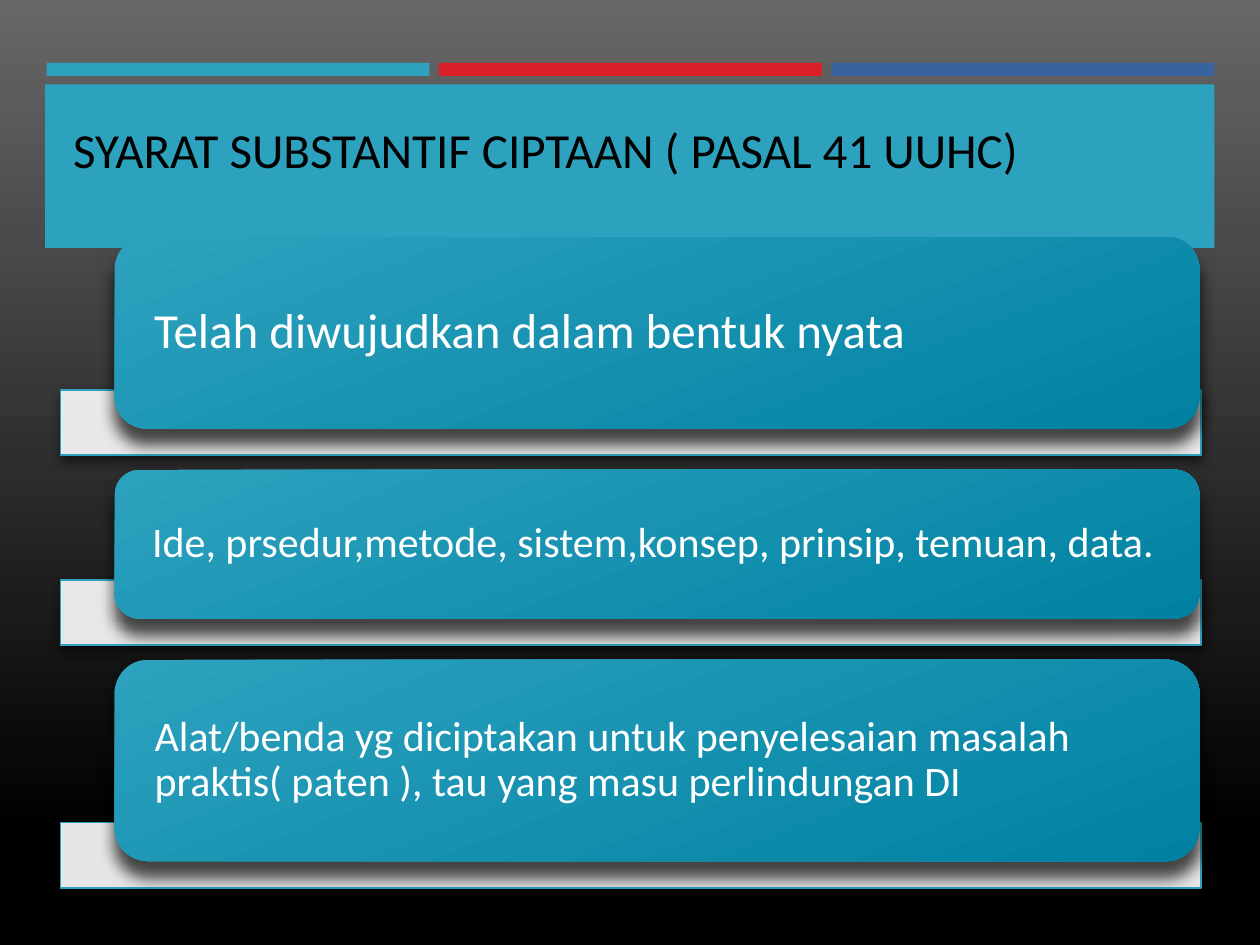
from dataclasses import dataclass

from lxml import etree
from pptx import Presentation
from pptx.dml.color import RGBColor
from pptx.enum import shapes, text
from pptx.oxml import ns
from pptx.util import Cm, Pt

TEAL, DEEP_TEAL, RED, BLUE = "2DA2BF", "0081A1", "DA1F28", "39639D"
BLACK, WHITE, GREY = "000000", "FFFFFF", "676767"
FONT = "Calibri"
CARD_TOP, CARD_STEP = 4.78, 0.83
TRACK_OVERLAP = 0.78


@dataclass
class Card:
    words: str
    height: float
    size: int


@dataclass
class Shadow:
    alpha: int
    blur: float
    dist: float


CARDS = [
    Card("Telah diwujudkan dalam bentuk nyata", 3.86, 28),
    Card("Ide, prsedur,metode, sistem,konsep, prinsip, temuan, data.", 3.0, 24),
    Card("Alat/benda yg diciptakan untuk penyelesaian masalah praktis( paten ), "
         "tau yang masu perlindungan DI", 4.06, 24),
]
TRACK_SHADOW = Shadow(60, 6, 3)
CARD_SHADOW = Shadow(70, 9, 9)


def rgb(value: str) -> RGBColor:
    return RGBColor.from_string(value)


def add_sub(parent, tag: str, **attrs):
    return etree.SubElement(parent, ns.qn(tag), attrs)


def fill_gradient(fill, start: str, end: str, end_pos: float, angle: float) -> None:
    """Fill from start to end; the angle runs clockwise."""
    fill.gradient()
    fill.gradient_angle = 360 - angle
    for stop, color, pos in zip(fill.gradient_stops, (start, end), (0, end_pos)):
        stop.color.rgb = rgb(color)
        stop.position = pos


def add_box(s, kind, left: float, top: float, width: float, height: float, color: str):
    sp = s.shapes.add_shape(kind, Cm(left), Cm(top), Cm(width), Cm(height))
    sp.shadow.inherit = False
    sp.fill.solid()
    sp.fill.fore_color.rgb = rgb(color)
    sp.line.fill.background()
    return sp


def add_shadow(sp, shadow: Shadow) -> None:
    effects = sp._element.spPr.find(ns.qn("a:effectLst"))
    outer = add_sub(effects, "a:outerShdw", blurRad=str(Pt(shadow.blur)),
                    dist=str(Pt(shadow.dist)), dir="5400000", rotWithShape="0")
    color = add_sub(outer, "a:srgbClr", val=BLACK)
    add_sub(color, "a:alpha", val=str(shadow.alpha * 1000))


def write(tf, words: str, size: int, color: str, frame: dict) -> None:
    for name, value in frame.items():
        setattr(tf, name, value)
    p = tf.paragraphs[0]
    p.alignment = text.PP_ALIGN.LEFT
    p.line_spacing = 0.9
    r = p.add_run()
    r.text = words
    for name, value in {"size": Pt(size), "name": FONT}.items():
        setattr(r.font, name, value)
    r.font.color.rgb = rgb(color)


def add_track(s, top: float) -> None:
    sp = add_box(s, shapes.MSO_SHAPE.RECTANGLE, 1.22, top, 22.99, 1.32, WHITE)
    color = sp._element.spPr.find(ns.qn("a:solidFill"))[0]
    add_sub(color, "a:alpha", val="90000")
    sp.line.color.rgb = rgb(TEAL)
    sp.line.width = Pt(1)
    add_shadow(sp, TRACK_SHADOW)


def add_card(s, card: Card, top: float) -> None:
    sp = add_box(s, shapes.MSO_SHAPE.ROUNDED_RECTANGLE, 2.31, top, 21.87, card.height, TEAL)
    fill_gradient(sp.fill, TEAL, DEEP_TEAL, 1, 69)
    add_shadow(sp, CARD_SHADOW)
    write(sp.text_frame, card.words, card.size, WHITE, {
        "word_wrap": True, "vertical_anchor": text.MSO_ANCHOR.MIDDLE,
        "margin_left": Cm(0.61), "margin_right": Cm(0.61),
        "margin_top": 0, "margin_bottom": 0})


def add_header(s) -> None:
    rect = shapes.MSO_SHAPE.RECTANGLE
    for i, color in enumerate((TEAL, RED, BLUE)):
        add_box(s, rect, 0.94 + 7.91 * i, 1.27, 7.72, 0.26, color)
    add_box(s, rect, 0.91, 1.7, 23.57, 3.3, TEAL)
    title = s.shapes.title
    place = {"left": Cm(1.22), "top": Cm(1.96), "width": Cm(22.99), "height": Cm(1.78)}
    for name, value in place.items():
        setattr(title, name, value)
    write(title.text_frame, "SYARAT SUBSTANTIF CIPTAAN ( PASAL 41 UUHC)", 28, BLACK, {
        "word_wrap": True, "auto_size": text.MSO_AUTO_SIZE.NONE,
        "vertical_anchor": text.MSO_ANCHOR.BOTTOM})
    s.shapes._spTree.append(title._element)  # bring the title above its band


def main() -> None:
    prs = Presentation()
    prs.slide_width, prs.slide_height = Cm(25.4), Cm(19.05)
    s = prs.slides.add_slide(prs.slide_layouts[5])
    fill_gradient(s.background.fill, GREY, BLACK, 0.88, 90)
    add_header(s)
    top = CARD_TOP
    for card in CARDS:
        add_track(s, top + card.height - TRACK_OVERLAP)
        add_card(s, card, top)
        top += card.height + CARD_STEP
    prs.save("out.pptx")


if __name__ == "__main__":
    main()
